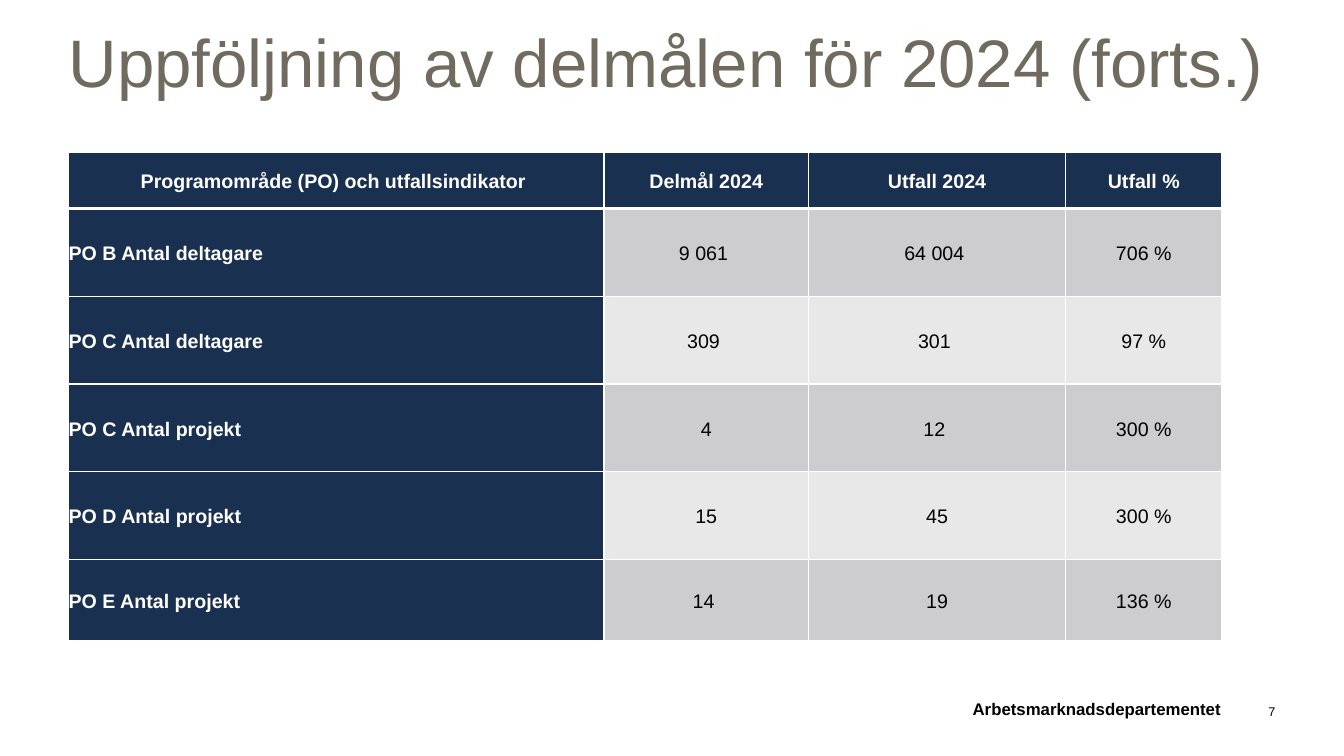
"""Build the slide with the follow-up table of the 2024 milestones."""
import dataclasses
import typing

import lxml.etree
import pptx
import pptx.dml.color
import pptx.enum.text
import pptx.oxml.ns
import pptx.util

Inches = pptx.util.Inches
RGBColor = pptx.dml.color.RGBColor
Align = pptx.enum.text.PP_ALIGN
Anchor = pptx.enum.text.MSO_ANCHOR

WHITE = RGBColor(0xFF, 0xFF, 0xFF)
BLACK = RGBColor(0x00, 0x00, 0x00)
TAUPE = RGBColor(0x71, 0x6B, 0x5F)
NAVY = RGBColor(0x1A, 0x30, 0x50)
BANDS = (RGBColor(0xCD, 0xCD, 0xD0), RGBColor(0xE8, 0xE8, 0xE9))

COLUMN_WIDTHS = (5.31, 2.03, 2.55, 1.55)
ROW_HEIGHTS = (0.56, 0.87, 0.87, 0.87, 0.87, 0.81)
ROWS = (
    ("Programområde (PO) och utfallsindikator ", "Delmål 2024", "Utfall 2024", "Utfall %"),
    ("PO B Antal deltagare", "9 061 ", "64 004 ", "706 %"),
    ("PO C Antal deltagare", "309 ", "301 ", "97 %"),
    ("PO C Antal projekt", "4", "12 ", "300 %"),
    ("PO D Antal projekt", "15", "45", "300 %"),
    ("PO E Antal projekt", "14 ", "19", "136 %"),
)


@dataclasses.dataclass(frozen=True)
class Style:
    size: float
    color: RGBColor
    bold: bool = False
    align: Align = Align.LEFT
    line_spacing: float = 1.0
    space_after: float = 0


@dataclasses.dataclass(frozen=True)
class Label:
    text: str
    left: float
    top: float
    width: float
    height: float
    style: Style
    anchor: Anchor = Anchor.BOTTOM
    margin: float = 0


LABELS = (
    Label("Uppföljning av delmålen för 2024 (forts.)", 0.68, 0.1, 11.97, 1.13,
          Style(48, TAUPE, line_spacing=0.85), Anchor.MIDDLE, 0.05),
    Label("Arbetsmarknadsdepartementet", 3.29, 6.89, 8.82, 0.24,
          Style(12, BLACK, True, Align.RIGHT, space_after=6)),
    Label("7", 12.12, 6.89, 0.53, 0.24,
          Style(9, BLACK, align=Align.RIGHT, space_after=6)),
)


def write_text(text_frame: typing.Any, text: str, style: Style) -> None:
    paragraph = text_frame.paragraphs[0]
    paragraph.alignment = style.align
    paragraph.line_spacing = style.line_spacing
    paragraph.space_after = pptx.util.Pt(style.space_after)
    run = paragraph.add_run()
    run.text = text
    run.font.name = "Arial"
    run.font.size = pptx.util.Pt(style.size)
    run.font.bold = style.bold
    run.font.color.rgb = style.color


def add_label(slide: typing.Any, label: Label) -> None:
    shape = slide.shapes.add_textbox(
        Inches(label.left), Inches(label.top), Inches(label.width), Inches(label.height))
    text_frame = shape.text_frame
    text_frame.word_wrap = True
    text_frame.vertical_anchor = label.anchor
    text_frame.margin_left = text_frame.margin_right = 0
    text_frame.margin_top = text_frame.margin_bottom = Inches(label.margin)
    write_text(text_frame, label.text, label.style)


def add_borders(cell: typing.Any, widths: dict[str, float]) -> None:
    properties = cell._tc.get_or_add_tcPr()
    qualified = pptx.oxml.ns.qn
    for side, width in widths.items():
        line = lxml.etree.SubElement(
            properties, qualified(f"a:ln{side}"), w=str(pptx.util.Pt(width)))
        fill = lxml.etree.SubElement(line, qualified("a:solidFill"))
        lxml.etree.SubElement(fill, qualified("a:srgbClr"), val=str(WHITE))


def format_cell(cell: typing.Any, text: str, row: int, column: int) -> None:
    is_heading = row == 0 or column == 0
    add_borders(cell, {"L": 1, "R": 1, "T": 3 if row == 1 else 1, "B": 3 if row == 0 else 1})
    cell.fill.solid()
    cell.fill.fore_color.rgb = NAVY if is_heading else BANDS[(row - 1) % 2]
    cell.vertical_anchor = Anchor.MIDDLE
    cell.margin_left = cell.margin_right = cell.margin_top = cell.margin_bottom = 0
    align = Align.LEFT if column == 0 and row > 0 else Align.CENTER
    style = Style(14, WHITE if is_heading else BLACK, is_heading, align, 1.15, 14)
    write_text(cell.text_frame, text, style)


def add_results_table(slide: typing.Any) -> None:
    table = slide.shapes.add_table(
        len(ROWS), len(COLUMN_WIDTHS), Inches(0.68), Inches(1.51),
        Inches(sum(COLUMN_WIDTHS)), Inches(sum(ROW_HEIGHTS))).table
    table.first_col = True
    for column, width in zip(table.columns, COLUMN_WIDTHS):
        column.width = Inches(width)
    for row, height in zip(table.rows, ROW_HEIGHTS):
        row.height = Inches(height)
    for row_index, texts in enumerate(ROWS):
        for column_index, text in enumerate(texts):
            format_cell(table.cell(row_index, column_index), text, row_index, column_index)


def main() -> None:
    presentation = pptx.Presentation()
    presentation.slide_width = Inches(13.33)
    presentation.slide_height = Inches(7.5)
    slide = presentation.slides.add_slide(presentation.slide_layouts[6])
    for label in LABELS:
        add_label(slide, label)
    add_results_table(slide)
    presentation.save("out.pptx")


if __name__ == "__main__":
    main()
